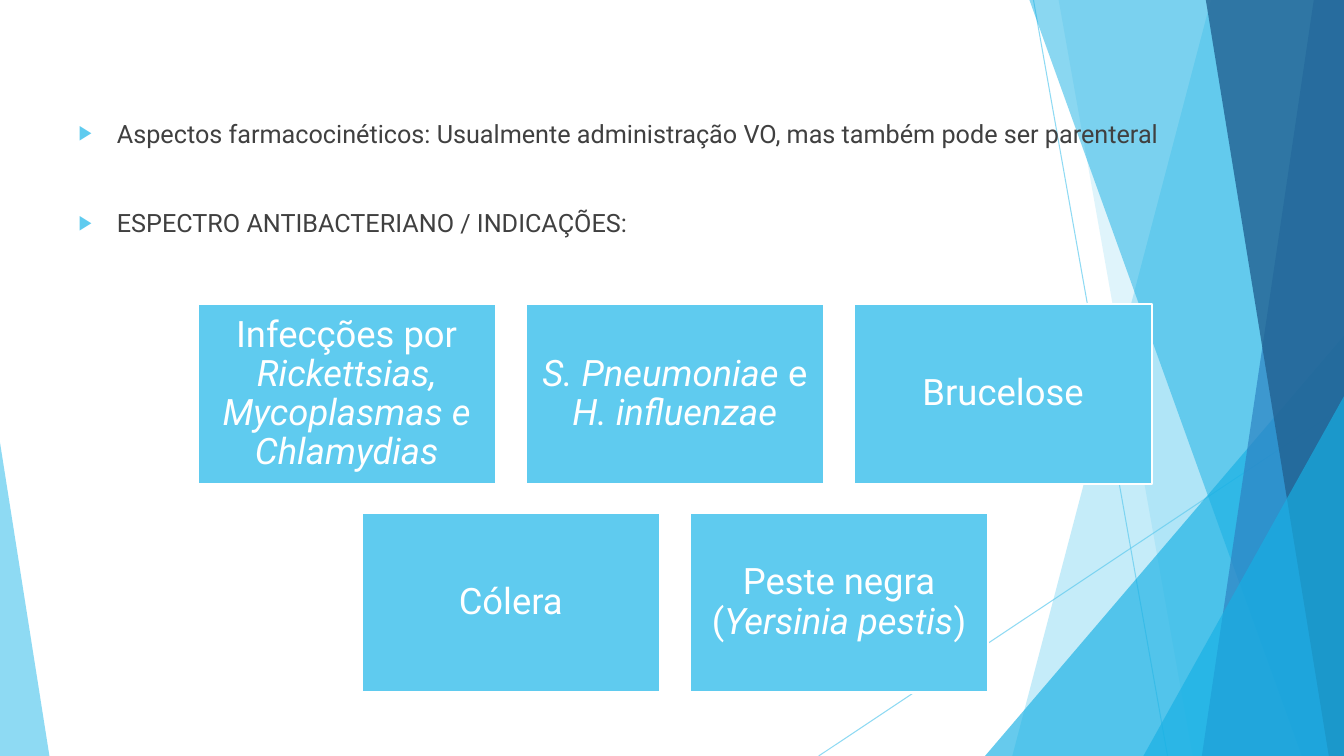
from dataclasses import dataclass

from pptx import Presentation
from pptx.dml.color import RGBColor
from pptx.enum.shapes import MSO_CONNECTOR as Connector, MSO_SHAPE as Shape
from pptx.enum.text import MSO_ANCHOR as Anchor, MSO_AUTO_SIZE as AutoSize, PP_ALIGN as Align
from pptx.oxml.ns import qn
from pptx.oxml.xmlchemy import OxmlElement
from pptx.util import Inches, Pt


@dataclass(frozen=True)
class Theme:
    font: str = "Roboto"
    sky: str = "5FCBEF"
    cyan: str = "17B0E4"
    blue: str = "2E83C3"
    navy: str = "226292"
    text: str = "404040"
    white: str = "FFFFFF"
    body_size: int = 18
    card_size: int = 26


THEME = Theme()
WIDTH, HEIGHT = 13.33, 7.5

BULLETS = [
    "Aspectos farmacocinéticos: Usualmente administração VO, mas também pode ser parenteral",
    "ESPECTRO ANTIBACTERIANO / INDICAÇÕES:",
]
CARD_ROWS = [
    [
        [("Infecções por ", False), ("Rickettsias, Mycoplasmas e Chlamydias", True)],
        [("S. Pneumoniae ", True), ("e ", False), ("H. influenzae", True)],
        [("Brucelose", False)],
    ],
    [
        [("Cólera", False)],
        [("Peste negra (", False), ("Yersinia pestis", True), (")", False)],
    ],
]


def add_element(parent, tag, **attributes):
    element = OxmlElement(tag)
    for name, value in attributes.items():
        element.set(name, str(value))
    parent.append(element)
    return element


def set_opacity(shape, percent):
    for color in shape._element.iter(qn("a:srgbClr")):
        add_element(color, "a:alpha", val=percent * 1000)


def paint(shape, color, opacity=100):
    shape.shadow.inherit = False
    shape.fill.solid()
    shape.fill.fore_color.rgb = RGBColor.from_string(color)
    shape.line.fill.background()
    if opacity < 100:
        set_opacity(shape, opacity)


def write(paragraph, runs, *, size, color, align, line_spacing=1.0, space_before=0):
    paragraph.alignment = align
    paragraph.line_spacing = line_spacing
    paragraph.space_before = Pt(space_before)
    paragraph.space_after = Pt(0)
    for text, italic in runs:
        run = paragraph.add_run()
        run.text = text
        run.font.name = THEME.font
        run.font.size = Pt(size)
        run.font.italic = italic
        run.font.color.rgb = RGBColor.from_string(color)


def set_bullet(paragraph, indent):
    properties = paragraph._p.get_or_add_pPr()
    properties.set("marL", str(Inches(indent)))
    properties.set("indent", str(-Inches(indent)))
    color = add_element(properties, "a:buClr")
    add_element(color, "a:srgbClr", val=THEME.sky)
    add_element(properties, "a:buSzPct", val=80000)
    add_element(properties, "a:buFont", typeface=THEME.font)
    add_element(properties, "a:buChar", char="▶")


def add_thin_line(slide, start, end):
    points = [Inches(value) for value in (*start, *end)]
    line = slide.shapes.add_connector(Connector.STRAIGHT, *points)
    line.line.color.rgb = RGBColor.from_string(THEME.sky)
    line.line.width = Pt(0.75)
    set_opacity(line, 70)
    add_element(line._element.spPr, "a:effectLst")


def add_band(slide, box, top_x, bottom_x, color, opacity):
    left, top, width, height = box
    right, bottom = left + width, top + height
    corners = [(right, top), (right, bottom), (left + bottom_x, bottom)]
    builder = slide.shapes.build_freeform(Inches(left + top_x), Inches(top))
    builder.add_line_segments([(Inches(x), Inches(y)) for x, y in corners], close=True)
    paint(builder.convert_to_shape(), color, opacity)


def add_corner(slide, box, apex, color, opacity):
    left, top, width, height = box
    triangle = slide.shapes.add_shape(
        Shape.ISOSCELES_TRIANGLE, Inches(left), Inches(top), Inches(width), Inches(height))
    triangle.adjustments[0] = apex
    paint(triangle, color, opacity)


def add_right_corner(slide, box, width, height, color, opacity):
    left, top, box_width, box_height = box
    corner = (left + box_width - width, top + box_height - height, width, height)
    add_corner(slide, corner, 1, color, opacity)


def add_facets(slide, box):
    left, top, width, height = box
    bottom = top + height
    add_thin_line(slide, (left + 0.48, top), (left + 1.81, bottom))
    add_thin_line(slide, (left + width, top + 4.03), (left - 1.65, bottom))
    add_band(slide, box, 2.24, 0.27, THEME.sky, 36)
    add_band(slide, box, 0.73, 2.06, THEME.sky, 20)
    add_right_corner(slide, box, 3.56, 4.17, THEME.cyan, 66)
    add_band(slide, box, 0.44, 3.14, THEME.cyan, 50)
    add_band(slide, box, 3.26, 2.15, THEME.blue, 70)
    add_band(slide, box, 2.19, 3.41, THEME.navy, 80)
    add_right_corner(slide, box, 1.99, 3.57, THEME.cyan, 66)


def add_bullets(slide, box):
    body = slide.placeholders[1]
    slide.shapes._spTree.append(body._element)
    body.left, body.top, body.width, body.height = [Inches(value) for value in box]
    frame = body.text_frame
    frame.word_wrap = True
    frame.auto_size = AutoSize.NONE
    frame.vertical_anchor = Anchor.TOP
    frame.margin_top = Inches(0.46)
    for index, text in enumerate(BULLETS):
        paragraph = frame.add_paragraph() if index else frame.paragraphs[0]
        write(paragraph, [(text, False)], size=THEME.body_size, color=THEME.text,
              align=Align.JUSTIFY, space_before=42.5 if index else 0)
        set_bullet(paragraph, 0.38)


def add_card(slide, box, runs):
    card = slide.shapes.add_shape(Shape.RECTANGLE, *[Inches(value) for value in box])
    paint(card, THEME.sky)
    card.line.color.rgb = RGBColor.from_string(THEME.white)
    card.line.width = Pt(1.5)
    frame = card.text_frame
    frame.word_wrap = True
    frame.vertical_anchor = Anchor.MIDDLE
    frame.margin_left = frame.margin_right = Inches(0.11)
    frame.margin_top = frame.margin_bottom = Inches(0.11)
    write(frame.paragraphs[0], runs, size=THEME.card_size, color=THEME.white,
          align=Align.CENTER, line_spacing=0.9)


def add_cards(slide, box, card_width=2.96, card_height=1.78):
    left, top, width, height = box
    columns = max(len(row) for row in CARD_ROWS)
    gap_x = (width - columns * card_width) / (columns - 1)
    gap_y = (height - len(CARD_ROWS) * card_height) / (len(CARD_ROWS) - 1)
    for row_index, row in enumerate(CARD_ROWS):
        row_width = len(row) * (card_width + gap_x) - gap_x
        row_left = left + (width - row_width) / 2
        row_top = top + row_index * (card_height + gap_y)
        for index, runs in enumerate(row):
            card_left = row_left + index * (card_width + gap_x)
            add_card(slide, (card_left, row_top, card_width, card_height), runs)


def main():
    presentation = Presentation()
    presentation.slide_width, presentation.slide_height = Inches(WIDTH), Inches(HEIGHT)
    slide = presentation.slides.add_slide(presentation.slide_layouts[1])
    title = slide.shapes.title._element
    title.getparent().remove(title)
    add_facets(slide, (9.77, 0, 3.56, HEIGHT))
    add_corner(slide, (0, 4.39, 0.49, 3.11), 0, THEME.sky, 70)
    add_bullets(slide, (0.68, 0.71, 11.54, 5.71))
    add_cards(slide, (1.96, 3.02, 9.47, 3.85))
    presentation.save("out.pptx")


if __name__ == "__main__":
    main()
